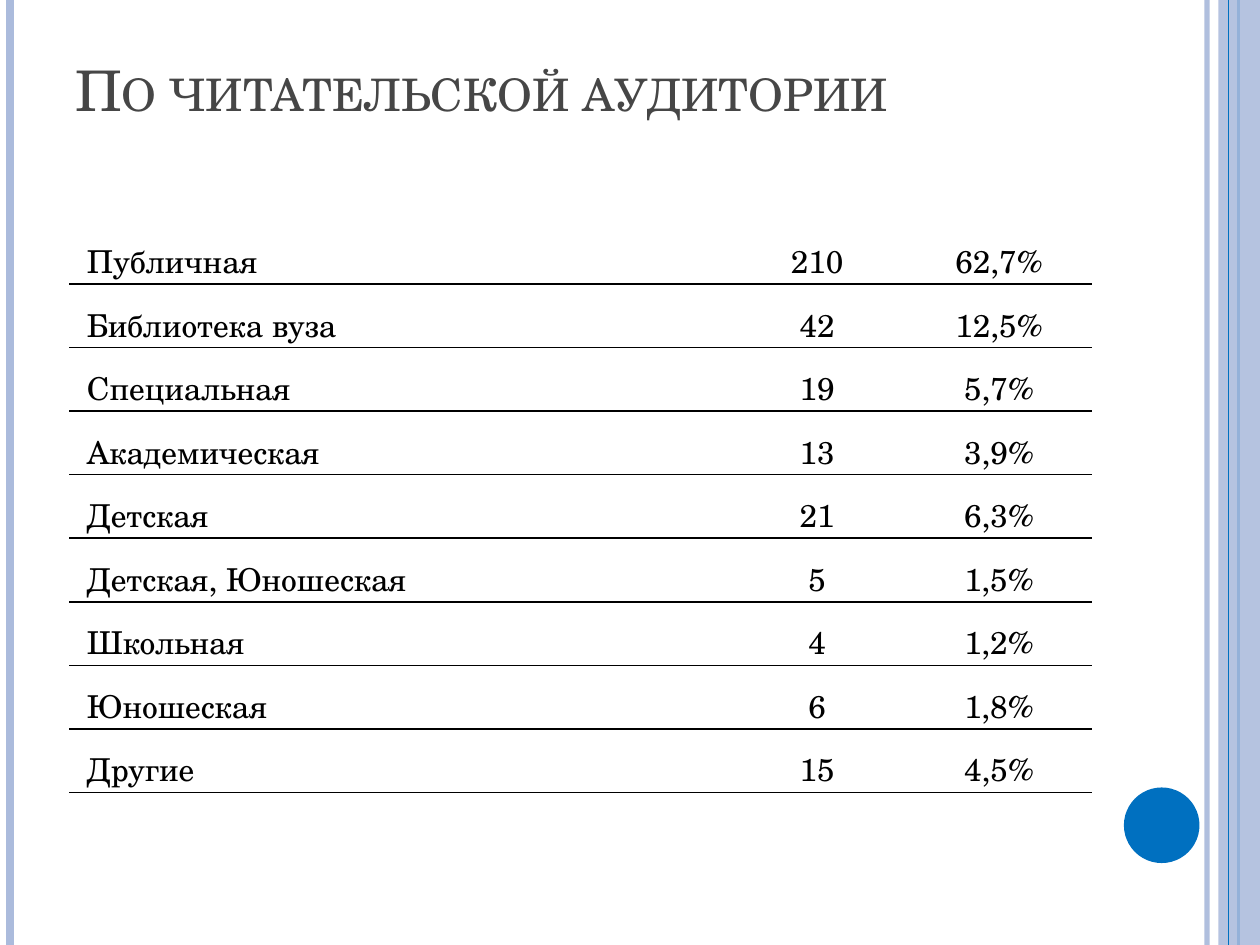
from lxml.etree import SubElement
from pptx import Presentation
from pptx.dml.color import RGBColor
from pptx.enum.shapes import MSO_CONNECTOR as Connector, MSO_SHAPE as Shape
from pptx.enum.text import MSO_ANCHOR as Anchor, PP_ALIGN as Align
from pptx.oxml import parse_xml
from pptx.oxml.ns import nsdecls, qn
from pptx.util import Inches, Pt

FONT = "TeX Gyre Schola"
PALE, BLUE, GREY, BLACK = "ABBBDC", "0070C0", "464646", "000000"
NO_STYLE = "{2D5ABB26-0587-4C30-8999-92F81FD0307C}"

TITLE = "По читательской аудитории"
ROWS = [
    ("Публичная", "210", "62,7%"),
    ("Библиотека вуза", "42", "12,5%"),
    ("Специальная", "19", "5,7%"),
    ("Академическая", "13", "3,9%"),
    ("Детская", "21", "6,3%"),
    ("Детская, Юношеская", "5", "1,5%"),
    ("Школьная", "4", "1,2%"),
    ("Юношеская", "6", "1,8%"),
    ("Другие", "15", "4,5%"),
]
COLUMN_WIDTHS = (5.23, 1.41, 1.48)
TABLE_LEFT, TABLE_TOP, TABLE_HEIGHT = 0.55, 1.75, 4.54

deck = Presentation()
deck.slide_width, deck.slide_height = Inches(10), Inches(7.5)
page = deck.slides.add_slide(deck.slide_layouts[6])


def paint(color_format, color):
    color_format.rgb = RGBColor.from_string(color)


def set_opacity(shape, percent):
    color = next(shape._element.spPr.iter(qn("a:srgbClr")))
    SubElement(color, qn("a:alpha")).set("val", str(percent * 1000))


def add_stripe(x, color, width):
    stripe = page.shapes.add_connector(
        Connector.STRAIGHT, Inches(x), 0, Inches(x), deck.slide_height)
    paint(stripe.line.color, color)
    stripe.line.width = Pt(width)
    SubElement(stripe._element.spPr, qn("a:effectLst"))
    return stripe


def add_filled(kind, left, top, width, height, color):
    shape = page.shapes.add_shape(
        kind, Inches(left), Inches(top), Inches(width), Inches(height))
    shape.shadow.inherit = False
    shape.fill.solid()
    paint(shape.fill.fore_color, color)
    shape.line.fill.background()
    return shape


def style(para, size, color):
    para.font.name, para.font.size = FONT, Pt(size)
    paint(para.font.color, color)


def add_bottom_border(cell):
    cell._tc.get_or_add_tcPr().insert(0, parse_xml(
        f'<a:lnB {nsdecls("a")} w="{Pt(1)}"><a:solidFill>'
        f'<a:srgbClr val="{BLACK}"/></a:solidFill></a:lnB>'))


# Edge decoration
set_opacity(add_stripe(9.58, PALE, 3), 93)
add_stripe(0.08, PALE, 4.5)
add_stripe(9.83, BLUE, 1.5)
set_opacity(add_filled(Shape.RECTANGLE, 9.67, 0, 0.33, 7.5, PALE), 87)
add_stripe(9.75, BLUE, 0.75)
add_filled(Shape.OVAL, 8.92, 6.25, 0.6, 0.6, BLUE)

# Title, raised one line above the bottom of its box
box = page.shapes.add_textbox(Inches(0.5), Inches(0.3), Inches(8.17), Inches(1.25))
frame = box.text_frame
frame.word_wrap = True
frame.vertical_anchor = Anchor.BOTTOM
frame.margin_bottom = Inches(0.58)
para = frame.paragraphs[0]
span = para.add_run()
span.text = TITLE
span.font._element.set("cap", "small")
style(para, 32, GREY)

# Table
holder = page.shapes.add_table(
    len(ROWS), len(COLUMN_WIDTHS), Inches(TABLE_LEFT), Inches(TABLE_TOP),
    Inches(sum(COLUMN_WIDTHS)), Inches(TABLE_HEIGHT))
next(holder._element.iter(qn("a:tableStyleId"))).text = NO_STYLE
table = holder.table
table.first_row = table.horz_banding = False
for column, width in zip(table.columns, COLUMN_WIDTHS):
    column.width = Inches(width)
for row, values in zip(table.rows, ROWS):
    row.height = Inches(TABLE_HEIGHT / len(ROWS))
    for index, (cell, value) in enumerate(zip(row.cells, values)):
        cell.text = value
        cell.fill.background()
        cell.vertical_anchor = Anchor.BOTTOM
        cell.margin_left = Inches(0 if index else 0.14)
        cell.margin_right = cell.margin_top = cell.margin_bottom = 0
        add_bottom_border(cell)
        para = cell.text_frame.paragraphs[0]
        para.alignment = Align.CENTER if index else Align.LEFT
        style(para, 18, BLACK)

deck.save("out.pptx")
